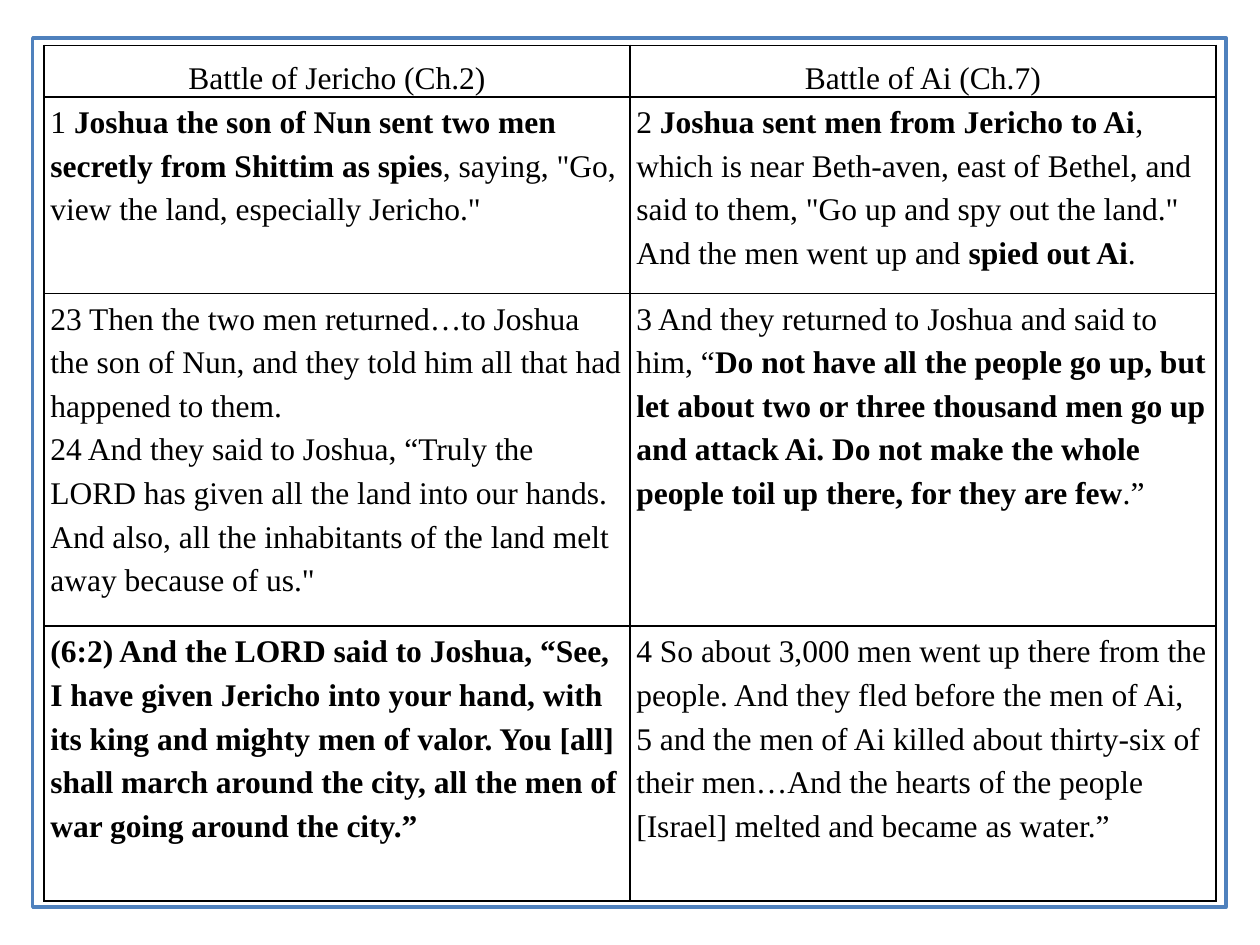
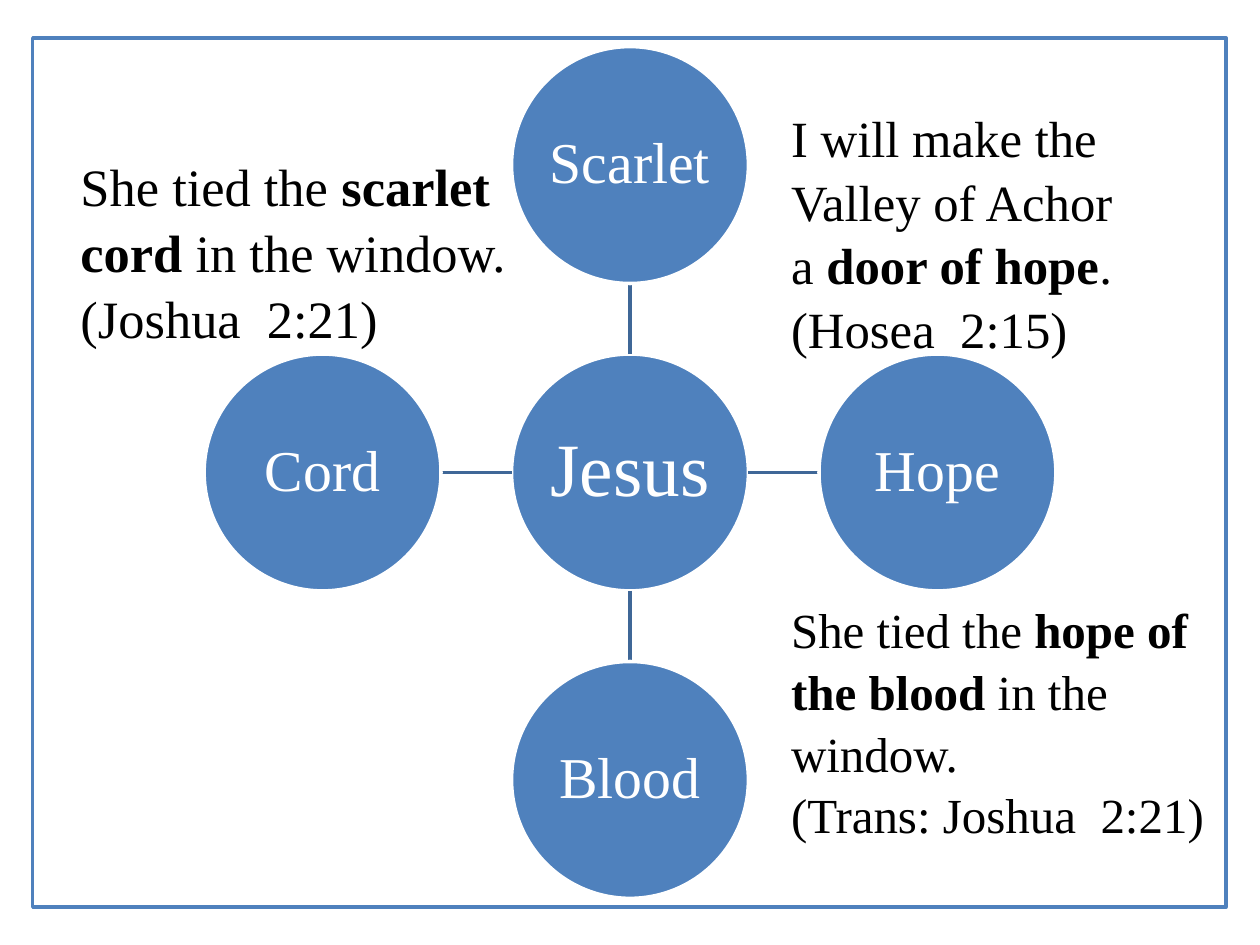
from lxml import etree
from pptx import Presentation
from pptx.dml.color import RGBColor
from pptx.enum import shapes, text
from pptx.oxml import ns
from pptx.util import Inches, Pt

FONT = "Times New Roman"
BLUE = RGBColor(0x4F, 0x81, 0xBD)
NAVY = RGBColor(0x3F, 0x67, 0x97)
BLACK = RGBColor(0, 0, 0)
WHITE = RGBColor(255, 255, 255)
MID = text.MSO_ANCHOR.MIDDLE
CENTER, LEFT = text.PP_ALIGN.CENTER, text.PP_ALIGN.LEFT

# Content: a cell or note is a list of paragraphs, a paragraph a list of
# runs; a tuple is a bold run
HEADS = ["Battle of Jericho (Ch.2)", "Battle of Ai (Ch.7)"]
VERSES = [
    ([["1 ", ("Joshua the son of Nun sent two men",)],
      [("secretly from Shittim as spies",),
       ', saying, "Go, view the land, especially Jericho."']],
     [["2 ", ("Joshua sent men from Jericho to Ai",), ","],
      ["which is near Beth-aven, east of Bethel, and said to them, "
       '"Go up and spy out the land."'],
      ["And the men went up and ", ("spied out Ai",), "."]]),
    ([["23 Then the two men returned…to Joshua"],
      ["the son of Nun, and they told him all that had happened to them."],
      ["24 And they said to Joshua, “Truly the"],
      ["LORD has given all the land into our hands. And also, all the "
       'inhabitants of the land melt away because of us."']],
     [["3 And they returned to Joshua and said to"],
      ["him, “", ("Do not have all the people go up, but let about two or "
                  "three thousand men go up and attack Ai. Do not make the "
                  "whole",)],
      [("people toil up there, for they are few",), ".”"]]),
    ([[("(6:2) And the LORD said to Joshua, “See, I have given Jericho into "
        "your hand, with",)],
      [("its king and mighty men of valor. You [all] shall march around the "
        "city, all the men of war going around the city.”",)]],
     [["4 So about 3,000 men went up there from the people. And they fled "
       "before the men of Ai,"],
      ["5 and the men of Ai killed about thirty-six of their men…And the "
       "hearts of the people"],
      ["[Israel] melted and became as water.”"]]),
]
ROWS = [0.41, 1.56, 2.64, 2.18]
HUB = "Jesus"
SPOKES = [("Scarlet", 0, -1), ("Hope", 1, 0), ("Blood", 0, 1), ("Cord", -1, 0)]
NOTES = [  # left, top, size, paragraphs
    (0.54, 0.96, 30, [["She tied the ", ("scarlet cord",), " in the window."],
                      ["(Joshua  2:21)"]]),
    (6.18, 0.81, 29, [["I will make the Valley of Achor"],
                      ["a ", ("door of hope",), "."],
                      ["(Hosea  2:15)"]]),
    (6.18, 4.69, 28, [["She tied the ", ("hope of the blood ",),
                       "in the window."],
                      ["(Trans: Joshua  2:21)"]]),
]


# Shared helpers
def write(frame, paras, size, color=BLACK, align=LEFT, space=1.0):
    for i, runs in enumerate(paras):
        para = frame.paragraphs[0] if i == 0 else frame.add_paragraph()
        para.alignment, para.line_spacing = align, space
        for part in runs:
            bold = isinstance(part, tuple)
            run = para.add_run()
            run.text = part[0] if bold else part
            font = run.font
            font.name, font.size, font.bold = FONT, Pt(size), bold
            font.color.rgb = color


def inset(item, side, top):
    item.margin_left = item.margin_right = Inches(side)
    item.margin_top = item.margin_bottom = Inches(top)


def shape(slide, kind, x, y, w, h, line, fill=None):
    item = slide.shapes.add_shape(kind, *map(Inches, (x, y, w, h)))
    item.shadow.inherit = False
    if fill is None:
        item.fill.background()
    else:
        item.fill.solid()
        item.fill.fore_color.rgb = fill
    item.line.color.rgb, item.line.width = line, Pt(2)
    return item


def framed(deck):
    slide = deck.slides.add_slide(deck.slide_layouts[6])
    shape(slide, shapes.MSO_SHAPE.RECTANGLE, 0.26, 0.3, 9.47, 6.9, BLUE)
    return slide


# Battle table
def border(cell):
    props = cell._tc.get_or_add_tcPr()
    for i, side in enumerate(("lnL", "lnR", "lnT", "lnB")):
        line = etree.Element(ns.qn("a:" + side), w=str(Pt(1)))
        fill = etree.SubElement(line, ns.qn("a:solidFill"))
        etree.SubElement(fill, ns.qn("a:srgbClr"), val=str(BLACK))
        props.insert(i, line)


def battles(deck):
    slide = framed(deck)
    grid = slide.shapes.add_table(
        len(ROWS), 2, Inches(0.35), Inches(0.36),
        Inches(9.3), Inches(sum(ROWS))).table
    grid.first_row = grid.horz_banding = False
    for col in grid.columns:
        col.width = Inches(4.65)
    for row, high in zip(grid.rows, ROWS):
        row.height = Inches(high)
    body = [[[[head]] for head in HEADS]] + VERSES
    for r, cells in enumerate(body):
        align, space = (LEFT, 1.25) if r else (CENTER, 1.45)
        for c, paras in enumerate(cells):
            cell = grid.cell(r, c)
            inset(cell, 0.05, 0)
            cell.fill.background()
            border(cell)
            write(cell.text_frame, paras, 18, align=align, space=space)


# Radial diagram
def disc(slide, word, x, y, size):
    wide = 1.88
    item = shape(slide, shapes.MSO_SHAPE.OVAL, x - wide / 2, y - wide / 2,
                 wide, wide, WHITE, BLUE)
    frame = item.text_frame
    inset(frame, 0.02, 0.02)
    frame.word_wrap, frame.vertical_anchor = False, MID
    write(frame, [[word]], size, WHITE, CENTER, 0.9)


def link(slide, *ends):
    line = slide.shapes.add_connector(
        shapes.MSO_CONNECTOR.STRAIGHT, *map(Inches, ends))
    line.line.color.rgb, line.line.width = NAVY, Pt(2)
    etree.SubElement(line._element.spPr, ns.qn("a:effectLst"))


def symbols(deck):
    slide = framed(deck)
    midx, midy, reach, near, far = 5, 3.75, 2.44, 0.94, 1.5
    disc(slide, HUB, midx, midy, 43)
    for word, dx, dy in SPOKES:
        link(slide, midx + dx * near, midy + dy * near,
             midx + dx * far, midy + dy * far)
        disc(slide, word, midx + dx * reach, midy + dy * reach, 33)
    for x, y, size, paras in NOTES:
        box = slide.shapes.add_textbox(*map(Inches, (x, y, 3.62, 2.05)))
        frame = box.text_frame
        frame.word_wrap, frame.vertical_anchor = True, MID
        write(frame, paras, size, space=1.05)


def main():
    deck = Presentation()
    deck.slide_width, deck.slide_height = Inches(10), Inches(7.5)
    battles(deck)
    symbols(deck)
    deck.save("out.pptx")


if __name__ == "__main__":
    main()
